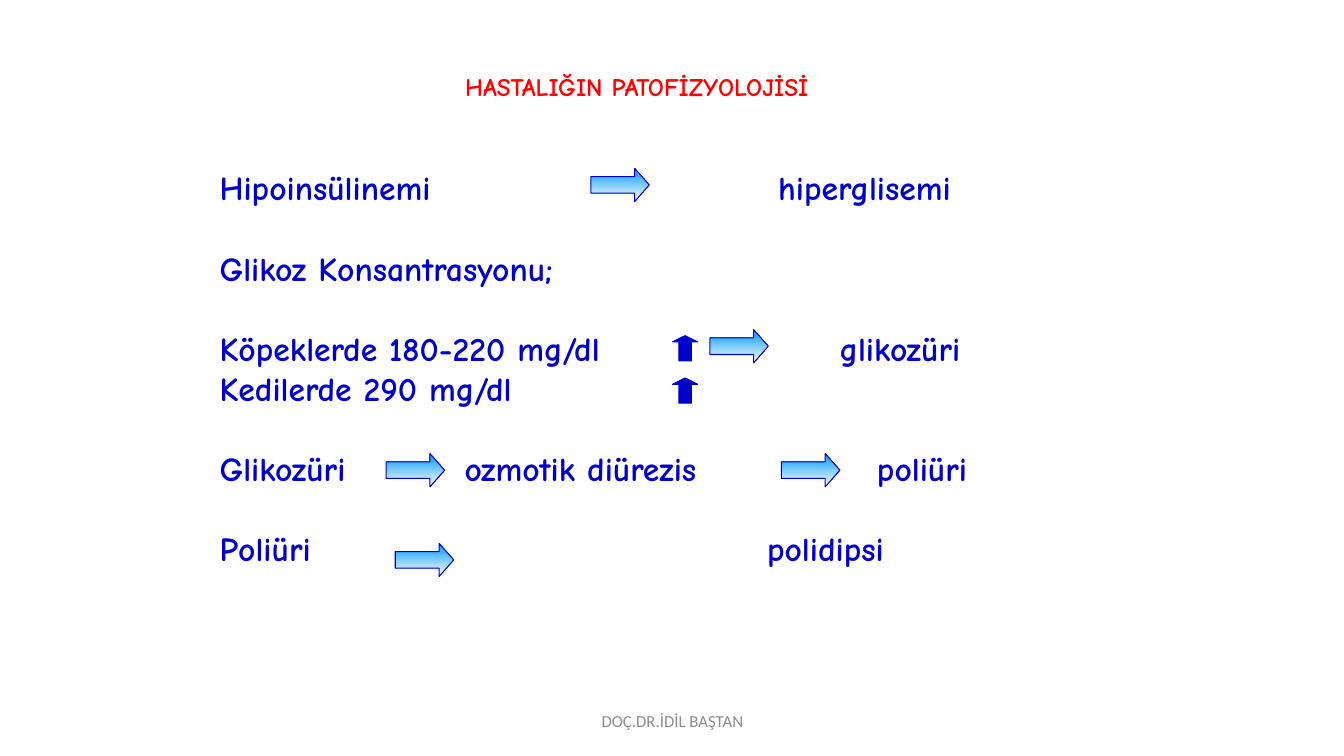
from lxml.etree import SubElement as Sub
from pptx import Presentation
from pptx.dml.color import RGBColor
from pptx.enum.shapes import MSO_SHAPE as Shape
from pptx.enum.text import MSO_ANCHOR as Anchor, MSO_AUTO_SIZE as Auto, PP_ALIGN as Align
from pptx.oxml.ns import qn
from pptx.util import Inches, Pt

BLUE = RGBColor(0x00, 0x00, 0xCC)
SKY = RGBColor(0x00, 0x99, 0xFF)
WHITE = RGBColor(0xFF, 0xFF, 0xFF)
RED = RGBColor(0xFF, 0x00, 0x00)
GREY = RGBColor(0x8C, 0x8C, 0x8C)

TITLE = dict(name="Comic Neue", size=Pt(18), bold=True)
BODY = dict(name="Comic Neue", size=Pt(24), bold=True)
FOOT = dict(name="Calibri", size=Pt(12), bold=False)

GAP = 28.5
LINES = [
    ("Hipoinsülinemi\thiperglisemi", 0, [5.54]),
    ("Glikoz Konsantrasyonu;", GAP, []),
    ("Köpeklerde 180-220 mg/dl\tglikozüri", GAP, [6.15]),
    ("Kedilerde 290 mg/dl", 0, []),
    ("Glikozüri\tozmotik diürezis\tpoliüri", GAP, [2.43, 6.52]),
    ("Poliüri\tpolidipsi", GAP, [5.43]),
]
RIGHT = [(3.78, 0.06), (4.96, 1.66), (1.75, 2.89), (5.67, 2.89), (1.84, 3.78)]
UP = [(4.59, 1.72), (4.59, 2.14)]


def place(shape, box):
    for key, val in zip(("left", "top", "width", "height"), box):
        setattr(shape, key, Inches(val))


def style(run, form, color):
    for key, val in form.items():
        setattr(run.font, key, val)
    run.font.color.rgb = color


def setup(frame, anchor):
    for key, val in dict(word_wrap=True, auto_size=Auto.NONE, vertical_anchor=anchor).items():
        setattr(frame, key, val)


def label(shape, box, text, form, color, anchor):
    place(shape, box)
    setup(shape.text_frame, anchor)
    para = shape.text_frame.paragraphs[0]
    para.alignment = Align.CENTER
    run = para.add_run()
    run.text = text
    style(run, form, color)


def arrow(slide, kind, box, bend):
    shape = slide.shapes.add_shape(kind, *map(Inches, box))
    shape.shadow.inherit = False
    shape.adjustments[1] = bend
    shape.line.color.rgb = BLUE
    shape.line.width = Pt(0.75)
    return shape


def add_line(para, text, gap, tabs):
    para.space_before = Pt(gap)
    if tabs:
        stops = Sub(para._p.get_or_add_pPr(), qn("a:tabLst"))
        for pos in tabs:
            Sub(stops, qn("a:tab"), pos=str(int(Inches(pos))), algn="l")
    run = para.add_run()
    run.text = text
    style(run, BODY, BLUE)


def flow(slide, box):
    frame = slide.shapes.add_textbox(*map(Inches, box)).text_frame
    setup(frame, Anchor.TOP)
    for num, line in enumerate(LINES):
        add_line(frame.add_paragraph() if num else frame.paragraphs[0], *line)
    left, top = box[:2]
    for x, y in RIGHT:
        shape = arrow(slide, Shape.RIGHT_ARROW, (left + x, top + y, 0.58, 0.33), 0.44)
        shape.fill.gradient()
        shape.fill.gradient_angle = 270
        for stop, color, pos in zip(shape.fill.gradient_stops, (SKY, WHITE), (0, 1)):
            stop.color.rgb = color
            stop.position = pos
    for x, y in UP:
        shape = arrow(slide, Shape.UP_ARROW, (left + x, top + y, 0.25, 0.25), 0.25)
        shape.fill.solid()
        shape.fill.fore_color.rgb = BLUE


def main():
    deck = Presentation()
    deck.slide_width, deck.slide_height = Inches(13.33), Inches(7.5)
    slide = deck.slides.add_slide(deck.slide_layouts[5])
    label(slide.shapes.title, (2.98, 0.66, 6.67, 0.4), "HASTALIĞIN PATOFİZYOLOJİSİ",
          TITLE, RED, Anchor.TOP)
    flow(slide, (2.08, 1.61, 9.63, 5.35))
    box = (4.42, 6.95, 4.5, 0.4)
    foot = slide.shapes.add_textbox(*map(Inches, box))
    label(foot, box, "DOÇ.DR.İDİL BAŞTAN", FOOT, GREY, Anchor.MIDDLE)
    deck.save("out.pptx")


if __name__ == "__main__":
    main()
